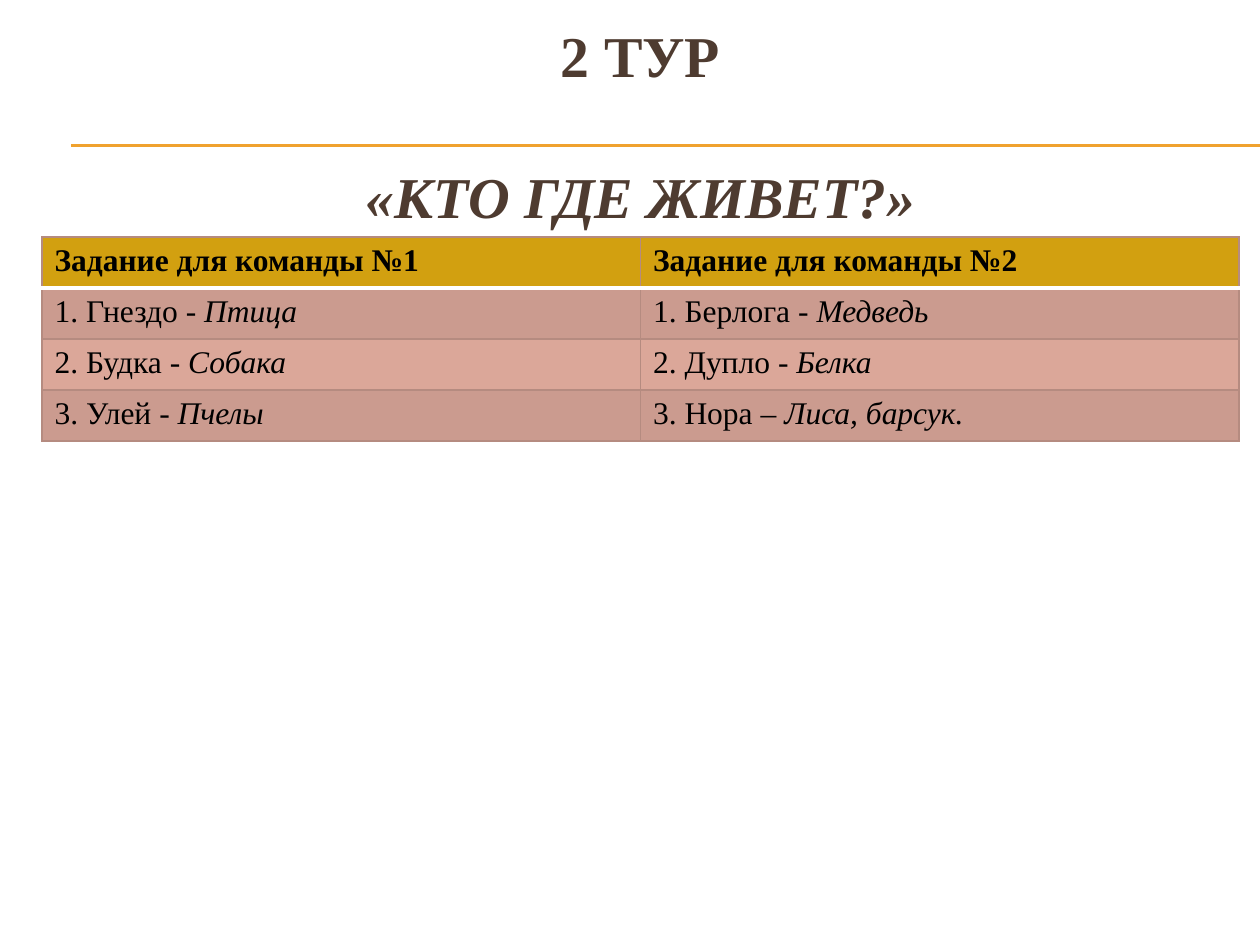
from lxml.etree import SubElement
from pptx import Presentation
from pptx.dml.color import RGBColor
from pptx.enum.shapes import MSO_CONNECTOR
from pptx.enum.text import MSO_ANCHOR, PP_ALIGN
from pptx.oxml.ns import qn
from pptx.util import Emu, Pt

SCALE = 914400 // 126
FONT = "Times New Roman"
GOLD, BROWN, ROSE, WHITE = "F0A22E", "4E3B30", "B58B80", "FFFFFF"
HEAD, DARK, LIGHT = "D2A010", "CB9B8F", "DBA799"


def px(num):
    return Emu(num * SCALE)


def color(code):
    return RGBColor.from_string(code)


def border(cell, side, code, width):
    line = SubElement(cell._tc.get_or_add_tcPr(), qn(f"a:ln{side}"), w=str(Pt(width)))
    fill = SubElement(line, qn("a:solidFill"))
    SubElement(fill, qn("a:srgbClr"), val=code)


class Deck:
    def __init__(self):
        self.file = Presentation()
        self.file.slide_width, self.file.slide_height = px(1260), px(945)
        self.slide = self.file.slides.add_slide(self.file.slide_layouts[6])

    def style(self, para, size, code, bold):
        font = para.font
        font.name, font.size, font.bold = FONT, Pt(size), bold
        font.color.rgb = color(code)

    def rule(self, left, right, top):
        line = self.slide.shapes.add_connector(
            MSO_CONNECTOR.STRAIGHT, px(left), px(top), px(right), px(top))
        line.line.color.rgb = color(GOLD)
        line.line.width = Pt(0.75)
        SubElement(line._element.spPr, qn("a:effectLst"))

    def title(self, left, top, width, height, first, second):
        box = self.slide.shapes.add_textbox(px(left), px(top), px(width), px(height))
        frame = box.text_frame
        frame.word_wrap = True
        frame.vertical_anchor = MSO_ANCHOR.MIDDLE
        para = frame.paragraphs[0]
        para.alignment = PP_ALIGN.CENTER
        para.line_spacing = 1.02
        self.style(para, 33, BROWN, True)
        para.add_run().text = first
        para.add_line_break()
        para.add_line_break()
        run = para.add_run()
        run.text = second
        run.font.italic = True

    def table(self, left, top, width, height, rows):
        """Each cell is a pair: upright text, then italic text."""
        count = len(rows)
        frame = self.slide.shapes.add_table(
            count, len(rows[0]), px(left), px(top), px(width), px(height * count))
        for r, row in enumerate(rows):
            for c, parts in enumerate(row):
                self.cell(frame.table.cell(r, c), r, parts)

    def cell(self, cell, row, parts):
        edges = {side: (ROSE, 0.79) for side in "LRTB"}
        if row < 2:
            edges["B" if row == 0 else "T"] = (WHITE, 2)
        for side, edge in edges.items():
            border(cell, side, *edge)
        cell.fill.solid()
        cell.fill.fore_color.rgb = color(HEAD if row == 0 else DARK if row % 2 else LIGHT)
        para = cell.text_frame.paragraphs[0]
        self.style(para, 18, "000000", row == 0)
        for text, slant in zip(parts, (False, True)):
            if text:
                run = para.add_run()
                run.text = text
                run.font.italic = slant


def main():
    deck = Deck()
    for top in (145, 146):
        deck.rule(71, 1260, top)
    deck.title(42, 66, 1197, 116, "2 ТУР", "«КТО ГДЕ ЖИВЕТ?»")
    deck.table(42, 237, 1197, 51, [
        [("Задание для команды №1", ""), ("Задание для команды №2", "")],
        [("1. Гнездо - ", "Птица"), ("1. Берлога - ", "Медведь")],
        [("2. Будка ", "- Собака"), ("2. Дупло ", "- Белка")],
        [("3. Улей ", "- Пчелы"), ("3. Нора – ", "Лиса, барсук.")],
    ])
    deck.file.save("out.pptx")


if __name__ == "__main__":
    main()
